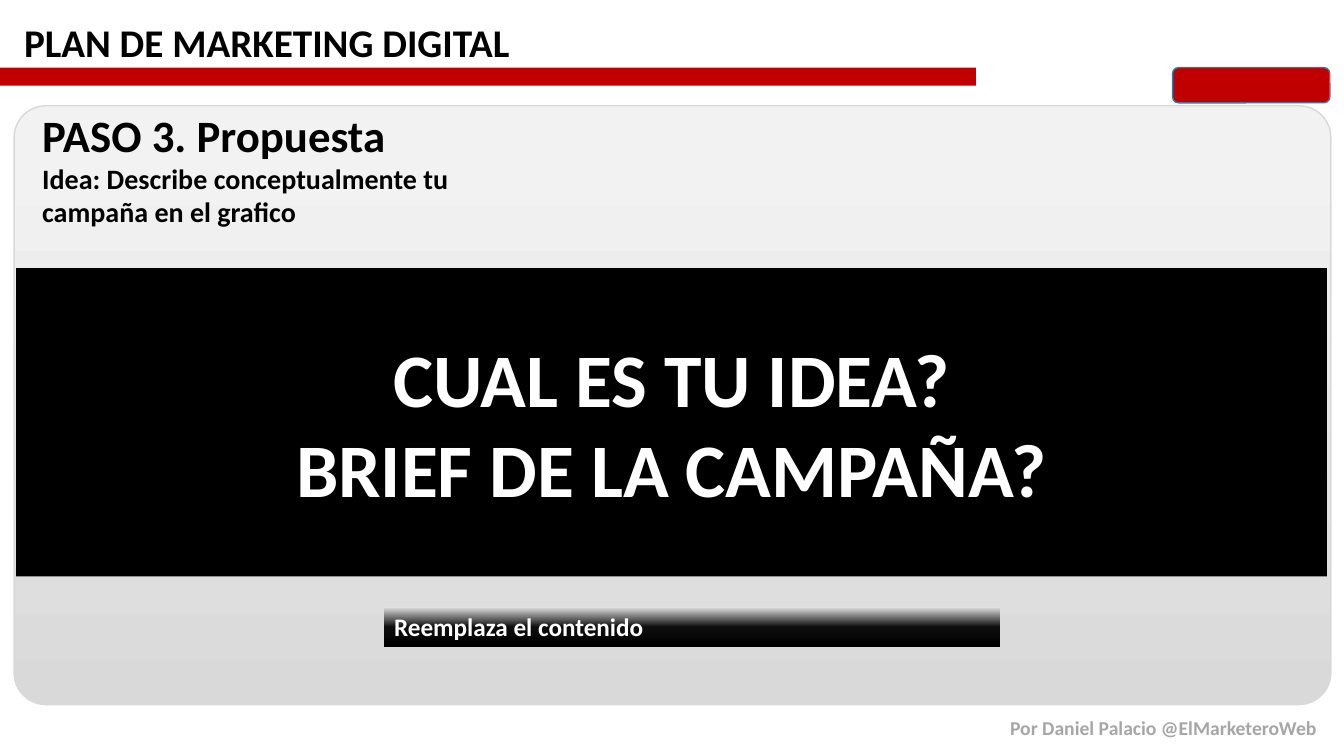
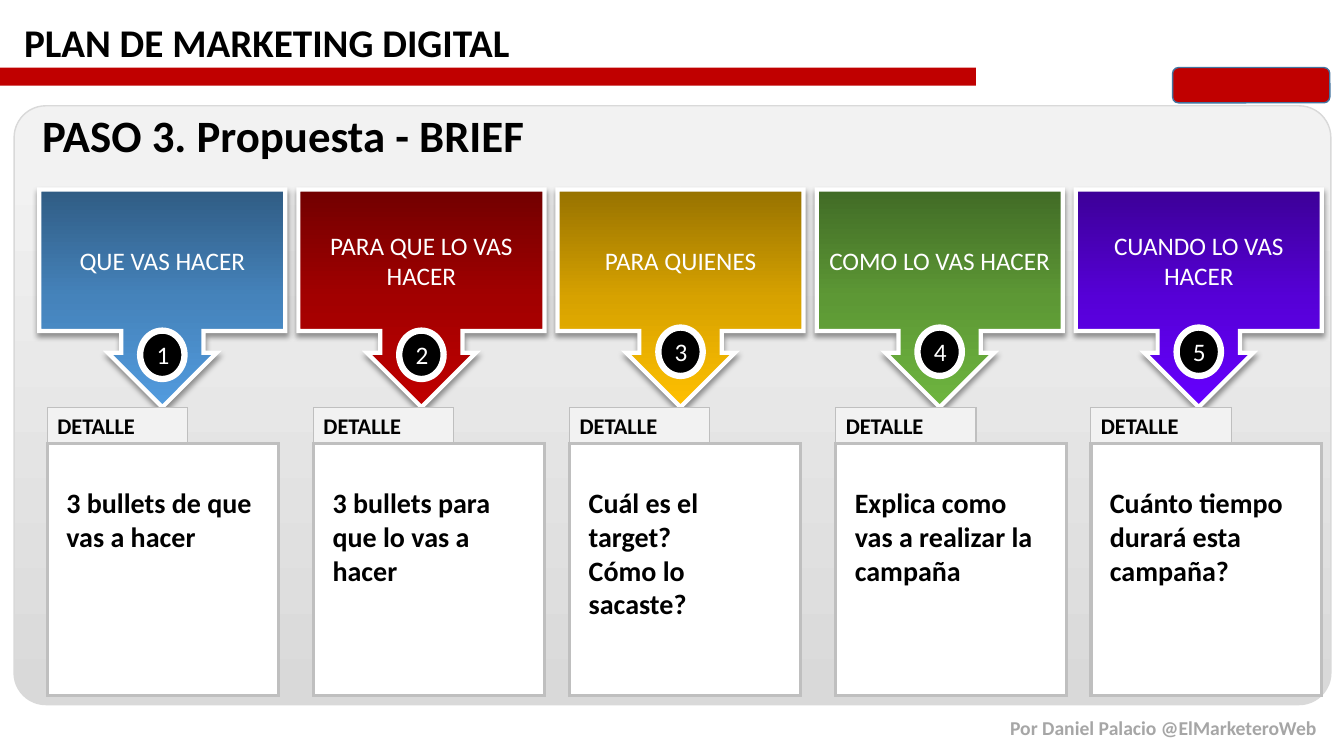
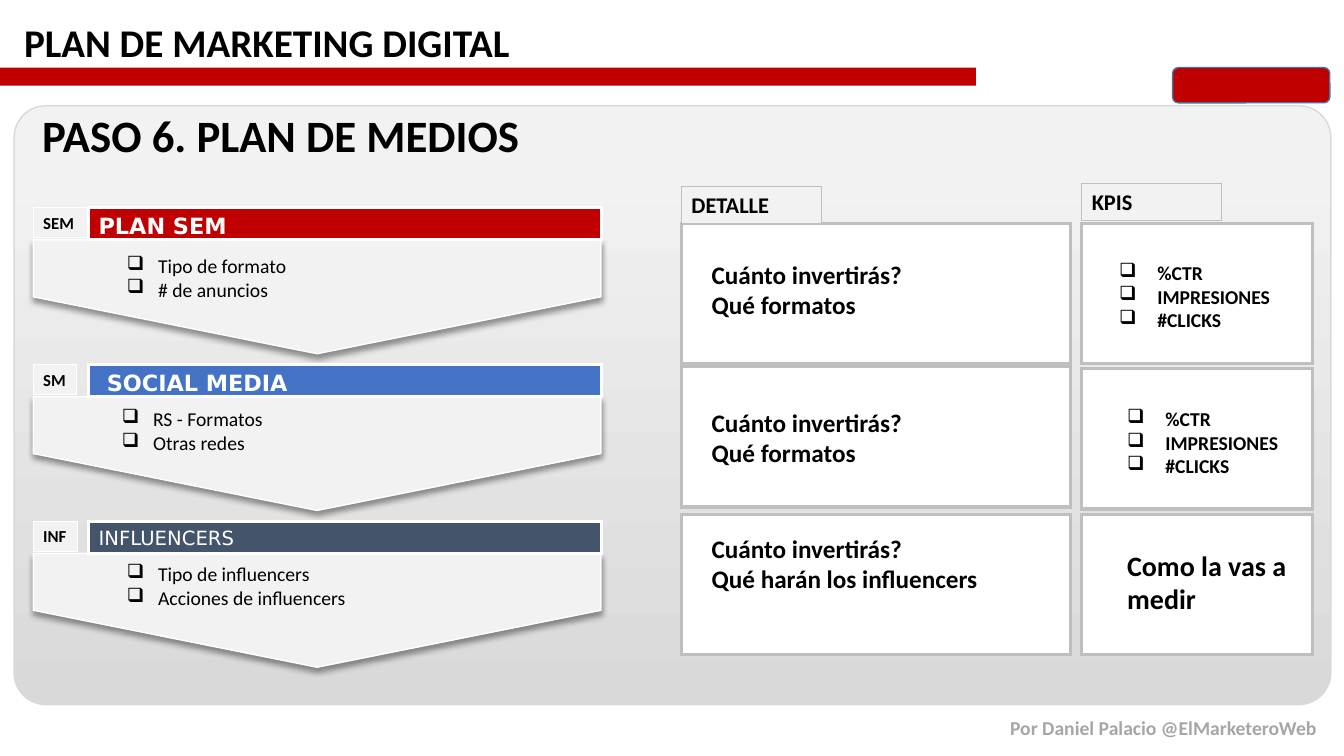
from lxml import etree
from pptx import Presentation
from pptx import util as u
from pptx.dml.color import RGBColor
from pptx.enum import shapes, text
from pptx.oxml.ns import qn

KIND = shapes.MSO_SHAPE
ALIGN = text.PP_ALIGN
BLACK, WHITE, RED = "000000", "FFFFFF", "C00000"
PALE, GREY = "F2F2F2", "BFBFBF"


def hue(code):
    """Turn a hex string into a colour."""
    return RGBColor.from_string(code)


def child(node, tag, **attrs):
    """Add a drawing element to a node."""
    return etree.SubElement(node, qn("a:" + tag), attrs)


def write(shape, words, size=18, color=BLACK, bold=True, font="Calibri",
          align=ALIGN.LEFT, middle=False, wrap=True, pad=0.1, bullet=0):
    """Fill a shape with formatted paragraphs, one for each line."""
    frame = shape.text_frame
    frame.word_wrap = wrap
    frame.margin_left = u.Inches(pad)
    frame.vertical_anchor = text.MSO_ANCHOR.MIDDLE if middle else text.MSO_ANCHOR.TOP
    frame.text = words
    for para in frame.paragraphs:
        para.alignment = align
        if bullet:
            props = para._p.get_or_add_pPr()
            props.set("marL", str(u.Inches(bullet)))
            props.set("indent", str(-u.Inches(bullet)))
            child(props, "buChar", char="❑")
        for run in para.runs:
            run.font.size = u.Pt(size)
            run.font.bold = bold
            run.font.name = font
            run.font.color.rgb = hue(color)


class Deck:
    """Holds the deck style and the current slide."""

    def __init__(self):
        """Start an empty wide deck."""
        self.file = Presentation()
        self.file.slide_width = u.Inches(13.33)
        self.file.slide_height = u.Inches(7.5)

    def page(self, title):
        """Add a slide with the shared frame and its title."""
        self.slide = self.file.slides.add_slide(self.file.slide_layouts[6])
        self.shape(0, 0.67, 9.68, 0.18, RED)
        self.label(0.14, 0.13, 5.08, 0.57, "PLAN DE MARKETING DIGITAL", size=28, wrap=False)
        self.shape(0.14, 1.05, 13.06, 5.94, [(0, "D9D9D9"), (91, PALE)], ("D9D9D9", 1),
                   kind=KIND.ROUNDED_RECTANGLE, adjust=[0.053], angle=90)
        self.label(9.92, 7.05, 3.27, 0.34, "Por Daniel Palacio @ElMarketeroWeb",
                   size=14, color="A6A6A6", wrap=False)
        self.shape(11.63, 0.67, 1.56, 0.35, RED, ("43739E", 1), kind=KIND.ROUNDED_RECTANGLE)
        self.label(0.32, 1.02, 7.72, 0.64, title, size=32)

    def label(self, x, y, w, h, words, **style):
        """Add a text box."""
        box = self.slide.shapes.add_textbox(*map(u.Inches, (x, y, w, h)))
        write(box, words, **style)

    def shape(self, x, y, w, h, fill, line=None, kind=KIND.RECTANGLE,
              adjust=(), angle=270, turn=0, shadow=False):
        """Add a preset shape with a plain or gradient fill."""
        item = self.slide.shapes.add_shape(kind, *map(u.Inches, (x, y, w, h)))
        item.rotation = turn
        for index, value in enumerate(adjust):
            item.adjustments[index] = value
        props = item._element.spPr
        if isinstance(fill, str):
            item.fill.solid()
            item.fill.fore_color.rgb = hue(fill)
        else:
            item.fill.gradient()
            item.fill.gradient_angle = angle
            stops = props.find(qn("a:gradFill")).find(qn("a:gsLst"))
            for stop in list(stops):
                stops.remove(stop)
            for place, code in fill:
                child(child(stops, "gs", pos=str(place * 1000)), "srgbClr", val=code)
        if line:
            item.line.color.rgb = hue(line[0])
            item.line.width = u.Pt(line[1])
            child(props.find(qn("a:ln")), "miter", lim="800000")
        else:
            item.line.fill.background()
        item.shadow.inherit = False
        if shadow:
            cast = child(props.find(qn("a:effectLst")), "outerShdw", blurRad=str(u.Pt(4)),
                         dist=str(u.Pt(3)), dir="5400000", rotWithShape="0")
            child(child(cast, "srgbClr", val=BLACK), "alpha", val="40000")
        return item

    def card(self, x, y, w, h):
        """Add a white card with a grey edge."""
        self.shape(x, y, w, h, WHITE, (GREY, 2.25))

    def tab(self, x, y, words):
        """Add the small heading that sits on a card."""
        write(self.shape(x, y, 1.39, 0.37, PALE, (GREY, 0.75)), words, size=16)

    def step(self, x, words, shades, count, top):
        """Add a numbered callout that points down."""
        fill = list(zip((0, 50, 100), shades))
        item = self.shape(x, 1.88, 2.44, 2.16, fill, (WHITE, 3), kind=KIND.DOWN_ARROW_CALLOUT,
                          adjust=[0.378, 0.25, 0.25, 0.65], shadow=True)
        look = dict(color=WHITE, bold=False, align=ALIGN.CENTER, middle=True)
        write(item, words, **look)
        dot = self.shape(x + 1, top, 0.44, 0.48, BLACK, (WHITE, 4.5), kind=KIND.OVAL)
        write(dot, str(count), **look)

    def banner(self, y, tag, width, words, fill, **style):
        """Add a tagged heading over a pointed panel."""
        self.shape(2.58, y - 1.93, 1.13, 5.63, PALE, (WHITE, 1),
                   kind=KIND.PENTAGON, turn=90, shadow=True)
        mark = self.shape(0.33, y, width, 0.3, PALE, (WHITE, 0.75))
        write(mark, tag, size=12, wrap=False)
        head = self.shape(0.88, y, 5.09, 0.32, fill, (WHITE, 2.25))
        write(head, words, color=WHITE, font="DejaVu Sans", **style)


def idea(deck):
    """Build the idea slide."""
    deck.page("PASO 3. Propuesta")
    deck.label(0.32, 1.55, 4.42, 1.11,
               "Idea: Describe conceptualmente tu campaña en el grafico", size=20)
    strip = deck.shape(3.81, 6.02, 6.11, 0.4,
                       [(0, BLACK), (50, "0D0D0D"), (100, "E3E3E3")], angle=90)
    write(strip, "Reemplaza el contenido", color=WHITE)
    panel = deck.shape(0.16, 2.66, 13, 3.06, BLACK)
    write(panel, "CUAL ES TU IDEA?\nBRIEF DE LA CAMPAÑA?", size=54, color=WHITE,
          align=ALIGN.CENTER, middle=True)


def brief(deck):
    """Build the five-step brief slide."""
    deck.page("PASO 3. Propuesta - BRIEF")
    steps = [
        ("QUE VAS HACER", ("305C84", "4583BB", "529BDE"), 3.28,
         0.47, "3 bullets de que vas a hacer"),
        ("PARA QUE LO VAS HACER", ("720000", "A20000", RED), 3.28,
         3.11, "3 bullets para que lo vas a hacer"),
        ("PARA QUIENES", ("977200", "D7A200", "FFC000"), 3.25,
         5.65, "Cuál es el target?\nCómo lo sacaste?"),
        ("COMO LO VAS HACER", ("416B26", "5D9835", "6EB53F"), 3.25,
         8.29, "Explica como vas a realizar la campaña"),
        ("CUANDO LO VAS HACER", ("3C0097", "5600D7", "6600FF"), 3.25,
         10.82, "Cuánto tiempo durará esta campaña?"),
    ]
    for index, (head, shades, top, x, note) in enumerate(steps):
        deck.step(0.39 + 2.57 * index, head, shades, index + 1, top)
        deck.tab(x, 4.04, "DETALLE")
        deck.card(x, 4.4, 2.29, 2.5)
        deck.label(x + 0.09, 4.77, 2.09, 1.45, note, size=20)


def media(deck):
    """Build the media plan slide."""
    deck.page("PASO 6. PLAN DE MEDIOS")
    heads = [
        ("SEM", 0.54, "PLAN SEM", RED, dict(size=16)),
        ("SM", 0.43, "SOCIAL MEDIA", "4472C4", dict(size=16, pad=0.18)),
        ("INF", 0.44, "INFLUENCERS", "44546A", dict(size=14, bold=False)),
    ]
    for index, (tag, width, words, fill, style) in enumerate(heads):
        deck.banner(2.06 + 1.555 * index, tag, width, words, fill, **style)

    points = [
        (1.16, 2.47, "Tipo de formato\n# de anuncios"),
        (1.11, 3.99, "RS - Formatos\nOtras redes"),
        (1.16, 5.53, "Tipo de influencers\nAcciones de influencers"),
    ]
    for x, y, words in points:
        deck.label(x, y, 4.82, 0.57, words, size=14, bold=False, bullet=0.31)

    spend = "Cuánto invertirás?\nQué "
    plans = [(2.22, 2.52, "formatos"), (3.64, 3.99, "formatos"),
             (5.1, 5.24, "harán los influencers")]
    for y, top, words in plans:
        deck.card(6.76, y, 3.86, 1.39)
        deck.label(6.96, top, 3.62, 0.71, spend + words)

    rates = "%CTR\nIMPRESIONES\n#CLICKS"
    listed = dict(size=14, bullet=0.38)
    goals = [(2.22, 11, 2.54, rates, listed), (3.66, 11.08, 3.99, rates, listed),
             (5.1, 11.08, 5.39, "Como la vas a medir", dict(size=20))]
    for y, x, top, words, style in goals:
        deck.card(10.73, y, 2.29, 1.39)
        deck.label(x, top, 2.09, 0.81, words, **style)

    deck.tab(6.76, 1.85, "DETALLE")
    deck.tab(10.73, 1.82, "KPIS")


def main():
    """Build and save the deck."""
    deck = Deck()
    idea(deck)
    brief(deck)
    media(deck)
    deck.file.save("out.pptx")


if __name__ == "__main__":
    main()
